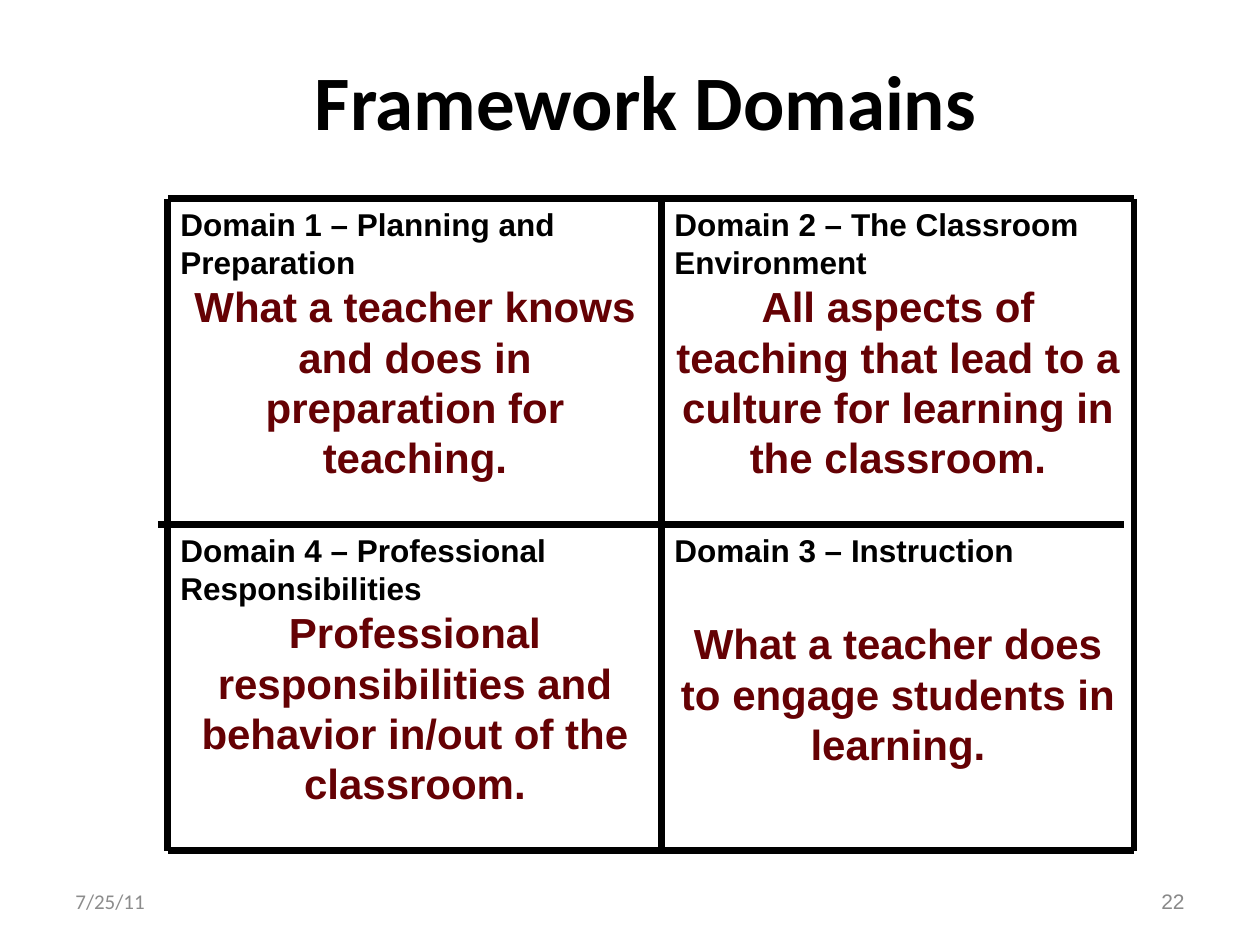
from dataclasses import dataclass

from lxml.etree import SubElement
from pptx import Presentation
from pptx.dml.color import RGBColor
from pptx.enum.shapes import MSO_CONNECTOR
from pptx.enum.text import MSO_ANCHOR, PP_ALIGN
from pptx.oxml.ns import qn
from pptx.util import Emu, Pt


@dataclass(frozen=True)
class Theme:
    black: str = "000000"
    maroon: str = "650104"
    date_gray: str = "8C8C8C"
    number_gray: str = "898989"
    heading_font: str = "Calibri"
    body_font: str = "Arial"
    title_size: int = 44
    body_size: int = 24
    label_size: int = 18
    footer_size: int = 12
    rule_width: int = 4


THEME = Theme()
PX_PER_INCH = 126
TITLE = "Framework Domains"
DATE = "7/25/11"
PAGE_NUMBER = "22"

# Grid rows of (label, description, space above the description in points)
DOMAINS = [
    [
        ("Domain 1 – Planning and Preparation",
         "What a teacher knows and does in preparation for teaching.", 0),
        ("Domain 2 – The Classroom Environment",
         "All aspects of teaching that lead to a culture for learning in the classroom.", 0),
    ],
    [
        ("Domain 4 – Professional Responsibilities",
         "Professional responsibilities and behavior in/out of the classroom.", 0),
        ("Domain 3 – Instruction",
         "What a teacher does to engage students in learning.", 28),
    ],
]
COLUMN_EDGES = [168, 662, 1134]
ROW_EDGES = [199, 525, 851]
MIDDLE_RULE_SHIFT = -10


def px(length):
    return Emu(round(length * 914400 / PX_PER_INCH))


def add_box(page, left, top, width, height, anchor=MSO_ANCHOR.MIDDLE):
    box = page.shapes.add_textbox(px(left), px(top), px(width), px(height))
    frame = box.text_frame
    frame.word_wrap = True
    frame.vertical_anchor = anchor
    return frame


def write(para, text, *, size, font=THEME.body_font, color=THEME.black,
          bold=False, align=PP_ALIGN.LEFT, before=0):
    para.alignment = align
    para.space_before = Pt(before)
    span = para.add_run()
    span.text = text
    span.font.name = font
    span.font.size = Pt(size)
    span.font.bold = bold
    span.font.color.rgb = RGBColor.from_string(color)


def add_rule(page, x1, y1, x2, y2):
    rule = page.shapes.add_connector(
        MSO_CONNECTOR.STRAIGHT, px(x1), px(y1), px(x2), px(y2))
    rule.line.color.rgb = RGBColor.from_string(THEME.black)
    rule.line.width = Pt(THEME.rule_width)
    SubElement(rule._element.spPr, qn("a:effectLst"))


def add_domains(page):
    for row, top, bottom in zip(DOMAINS, ROW_EDGES, ROW_EDGES[1:]):
        for domain, left, right in zip(row, COLUMN_EDGES, COLUMN_EDGES[1:]):
            label, description, gap = domain
            frame = add_box(page, left, top, right - left, bottom - top, MSO_ANCHOR.TOP)
            write(frame.paragraphs[0], label, size=THEME.label_size, bold=True)
            write(frame.add_paragraph(), description, size=THEME.body_size, bold=True,
                  color=THEME.maroon, align=PP_ALIGN.CENTER, before=gap)


def add_grid(page):
    left, right = COLUMN_EDGES[0], COLUMN_EDGES[-1]
    top, bottom = ROW_EDGES[0], ROW_EDGES[-1]
    for x in COLUMN_EDGES:
        add_rule(page, x, top, x, bottom)
    for y in ROW_EDGES:
        shift = 0 if y in (top, bottom) else MIDDLE_RULE_SHIFT
        add_rule(page, left + shift, y, right + shift, y)


def main():
    deck = Presentation()
    deck.slide_width, deck.slide_height = px(1260), px(945)
    page = deck.slides.add_slide(deck.slide_layouts[6])

    title = add_box(page, 210, 42, 872, 116)
    write(title.paragraphs[0], TITLE, size=THEME.title_size, font=THEME.heading_font,
          bold=True, align=PP_ALIGN.CENTER)
    date = add_box(page, 63, 876, 294, 50)
    write(date.paragraphs[0], DATE, size=THEME.footer_size, font=THEME.heading_font,
          color=THEME.date_gray)
    number = add_box(page, 903, 876, 294, 50)
    write(number.paragraphs[0], PAGE_NUMBER, size=THEME.footer_size,
          color=THEME.number_gray, align=PP_ALIGN.RIGHT)

    add_domains(page)
    add_grid(page)
    deck.save("out.pptx")


if __name__ == "__main__":
    main()
